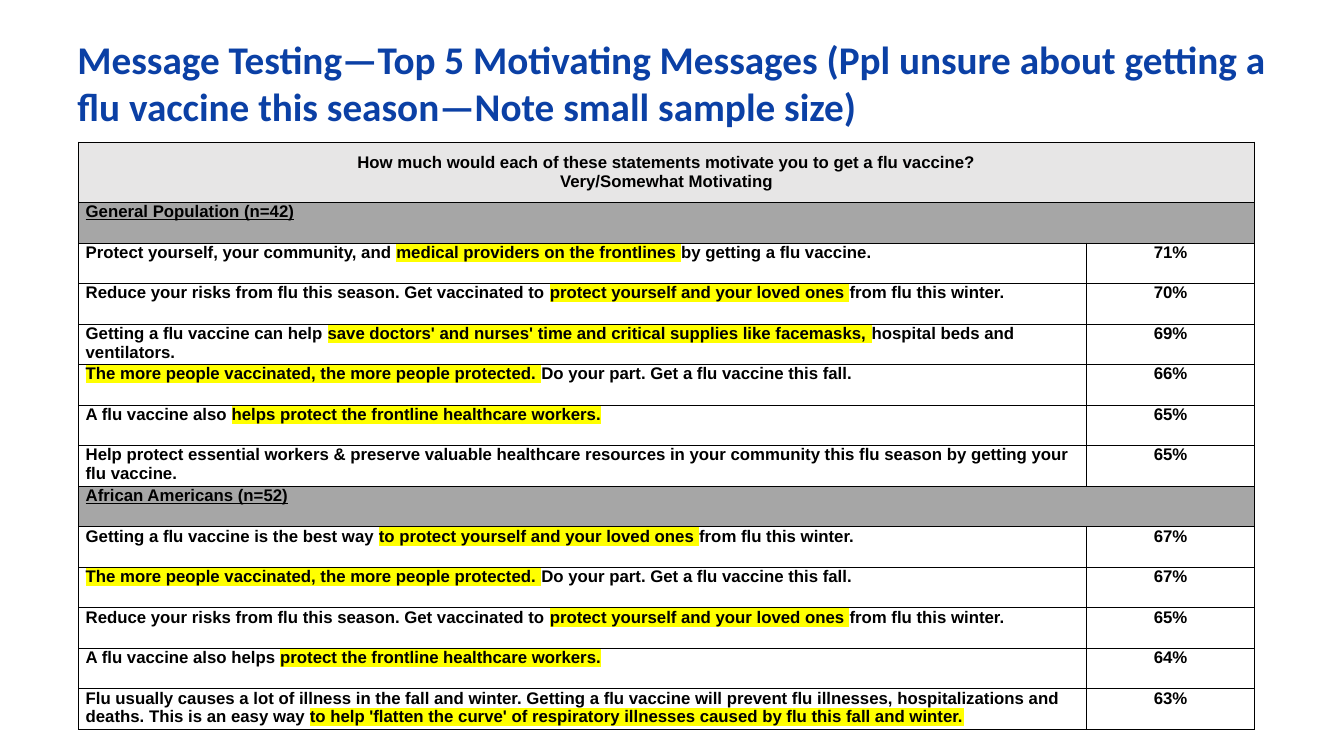
from dataclasses import dataclass

import pptx
import pptx.util
import pptx.dml.color
import pptx.enum.text
from lxml import etree
from pptx.oxml.ns import qn

Inches = pptx.util.Inches
ALIGN = pptx.enum.text.PP_ALIGN
ANCHOR = pptx.enum.text.MSO_ANCHOR


@dataclass(frozen=True)
class Theme:
    title_color: str = "0B40A5"
    text_color: str = "000000"
    header_fill: str = "E7E6E6"
    section_fill: str = "A6A6A6"
    highlight: str = "FFFF00"
    title_font: str = "Calibri"
    table_font: str = "Arial"
    title_size: int = 28
    table_size: int = 12
    border_width: int = 1


THEME = Theme()

TITLE = ("Message Testing—Top 5 Motivating Messages (Ppl unsure about getting a "
         "flu vaccine this season—Note small sample size)")
QUESTION = ["How much would each of these statements motivate you to get a flu vaccine?",
            "Very/Somewhat Motivating"]

# Messages used by both groups: (before, highlighted, after)
MORE_PEOPLE = ("", "The more people vaccinated, the more people protected. ",
               "Do your part. Get a flu vaccine this fall.")
REDUCE_RISKS = ("Reduce your risks from flu this season. Get vaccinated to ",
                "protect yourself and your loved ones ", "from flu this winter.")

# Each group: heading, then (message, share motivated)
GROUPS = [
    ("General Population (n=42)", [
        (("Protect yourself, your community, and ", "medical providers on the frontlines ",
          "by getting a flu vaccine."), "71%"),
        (REDUCE_RISKS, "70%"),
        (("Getting a flu vaccine can help ",
          "save doctors' and nurses' time and critical supplies like facemasks, ",
          "hospital beds and ventilators."), "69%"),
        (MORE_PEOPLE, "66%"),
        (("A flu vaccine also ", "helps protect the frontline healthcare workers.", ""), "65%"),
        (("Help protect essential workers & preserve valuable healthcare resources in your "
          "community this flu season by getting your flu vaccine.", "", ""), "65%"),
    ]),
    ("African Americans (n=52)", [
        (("Getting a flu vaccine is the best way ", "to protect yourself and your loved ones ",
          "from flu this winter."), "67%"),
        (MORE_PEOPLE, "67%"),
        (REDUCE_RISKS, "65%"),
        (("A flu vaccine also helps ", "protect the frontline healthcare workers.", ""), "64%"),
        (("Flu usually causes a lot of illness in the fall and winter. Getting a flu vaccine "
          "will prevent flu illnesses, hospitalizations and deaths. This is an easy way ",
          "to help 'flatten the curve' of respiratory illnesses caused by flu this fall and "
          "winter.", ""), "63%"),
    ]),
]


def rgb(color):
    return pptx.dml.color.RGBColor.from_string(color)


def style_paragraph(paragraph, font_name, size, color, underline=None):
    font = paragraph.font
    font.name = font_name
    font.size = pptx.util.Pt(size)
    font.bold = True
    font.underline = underline
    font.color.rgb = rgb(color)


def add_title(slide):
    title = slide.shapes.add_textbox(Inches(0.67), Inches(0.3), Inches(12), Inches(1.3))
    title.text_frame.word_wrap = True
    title.text_frame.vertical_anchor = ANCHOR.TOP
    title.text_frame.text = TITLE
    style_paragraph(title.text_frame.paragraphs[0], THEME.title_font, THEME.title_size,
                    THEME.title_color)


def add_solid_fill(parent, color):
    fill = etree.SubElement(parent, qn("a:solidFill"))
    etree.SubElement(fill, qn("a:srgbClr"), val=color)


def highlight_run(run):
    highlight = etree.SubElement(run.font._element, qn("a:highlight"))
    etree.SubElement(highlight, qn("a:srgbClr"), val=THEME.highlight)


def format_cell(cell, fill=None):
    """Set margins, borders and fill."""
    cell.margin_left = cell.margin_right = Inches(0.07)
    cell.margin_top = cell.margin_bottom = 0
    properties = cell._tc.get_or_add_tcPr()
    for side in ("a:lnL", "a:lnR", "a:lnT", "a:lnB"):
        border = etree.SubElement(properties, qn(side),
                                  w=str(pptx.util.Pt(THEME.border_width)))
        add_solid_fill(border, THEME.text_color)
    if fill:
        cell.fill.solid()
        cell.fill.fore_color.rgb = rgb(fill)
    else:
        cell.fill.background()


def write_cell(cell, paragraphs, align=ALIGN.LEFT, underline=None):
    """Write paragraphs, each a (before, highlighted, after) tuple."""
    frame = cell.text_frame
    for index, parts in enumerate(paragraphs):
        paragraph = frame.add_paragraph() if index else frame.paragraphs[0]
        paragraph.alignment = align
        style_paragraph(paragraph, THEME.table_font, THEME.table_size, THEME.text_color,
                        underline)
        for position, text in enumerate(parts):
            if text:
                run = paragraph.add_run()
                run.text = text
                if position == 1:
                    highlight_run(run)


def add_band(table, row, fill, lines, **text_options):
    """Fill a row that spans both columns."""
    table.cell(row, 0).merge(table.cell(row, 1))
    for cell in table.rows[row].cells:
        format_cell(cell, fill)
    write_cell(table.cell(row, 0), [(line,) for line in lines], **text_options)


def add_message(table, row, message, share):
    for cell in table.rows[row].cells:
        format_cell(cell)
    write_cell(table.cell(row, 0), [message])
    write_cell(table.cell(row, 1), [(share,)], align=ALIGN.CENTER)


def add_results_table(slide):
    body_rows = sum(1 + len(messages) for _, messages in GROUPS)
    height, header_height = Inches(5.83), Inches(0.6)
    table = slide.shapes.add_table(body_rows + 1, 2, Inches(0.78), Inches(1.41),
                                   Inches(11.66), height).table
    table.first_row = table.horz_banding = False
    table.columns[0].width, table.columns[1].width = Inches(10), Inches(1.66)
    for table_row in table.rows:
        table_row.height = (height - header_height) // body_rows
    table.rows[0].height = header_height

    # Question
    add_band(table, 0, THEME.header_fill, QUESTION, align=ALIGN.CENTER)
    table.cell(0, 0).vertical_anchor = ANCHOR.MIDDLE

    # Groups and their messages
    row = 1
    for heading, messages in GROUPS:
        add_band(table, row, THEME.section_fill, [heading], underline=True)
        for offset, (message, share) in enumerate(messages, start=1):
            add_message(table, row + offset, message, share)
        row += 1 + len(messages)


def main():
    presentation = pptx.Presentation()
    presentation.slide_width = Inches(13.33)
    presentation.slide_height = Inches(7.5)
    slide = presentation.slides.add_slide(presentation.slide_layouts[6])
    add_results_table(slide)
    add_title(slide)
    presentation.save("out.pptx")


if __name__ == "__main__":
    main()
